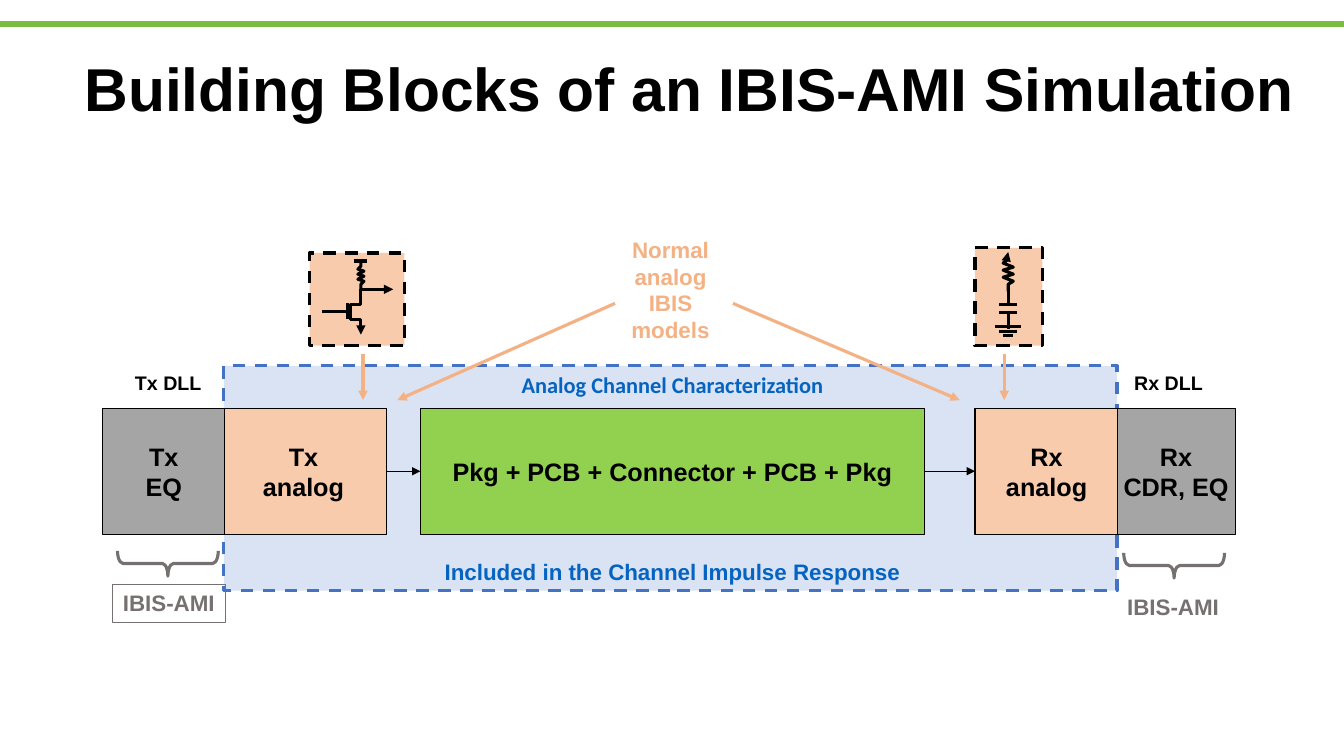
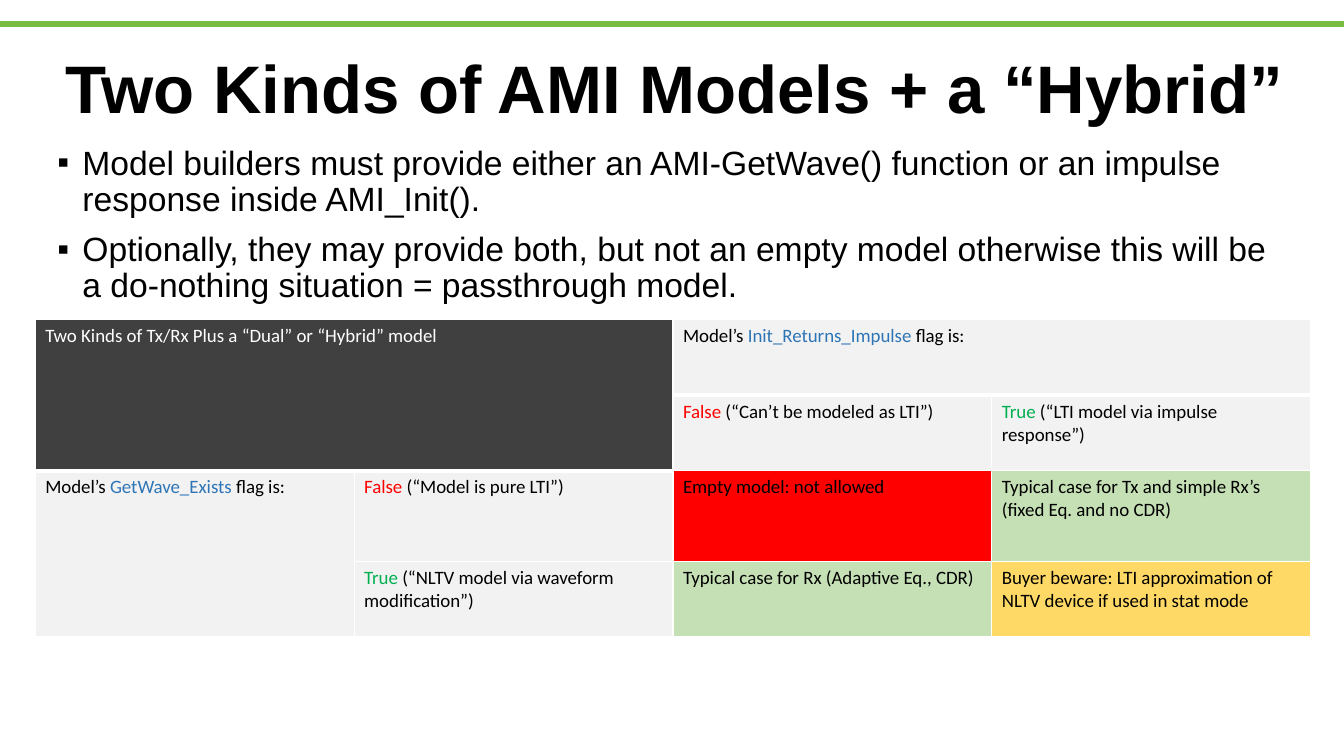
from lxml import etree
from pptx import Presentation
from pptx.dml.color import RGBColor
from pptx.enum.dml import MSO_LINE
from pptx.enum.shapes import MSO_CONNECTOR, MSO_SHAPE
from pptx.enum.text import MSO_ANCHOR, PP_ALIGN
from pptx.oxml.ns import qn
from pptx.util import Inches, Pt

STRAIGHT = MSO_CONNECTOR.STRAIGHT
RECTANGLE, BRACE = MSO_SHAPE.RECTANGLE, MSO_SHAPE.RIGHT_BRACE
DASH = MSO_LINE.DASH
LEFT, CENTER = PP_ALIGN.LEFT, PP_ALIGN.CENTER
TOP, MIDDLE = MSO_ANCHOR.TOP, MSO_ANCHOR.MIDDLE


class Theme:
    font, table_font = "Arial", "Calibri"
    black, white = RGBColor(0, 0, 0), RGBColor(255, 255, 255)
    band = RGBColor.from_string("7BBC42")
    channel_fill = RGBColor.from_string("DAE3F3")
    channel_line = RGBColor.from_string("4472C4")
    channel_text = RGBColor.from_string("0563C1")
    interconnect = RGBColor.from_string("92D050")
    analog = RGBColor.from_string("F8CBAD")
    analog_accent = RGBColor.from_string("F4B183")
    equalizer = RGBColor.from_string("A5A5A5")
    ami = RGBColor.from_string("767171")
    dark = RGBColor.from_string("404040")
    pale = RGBColor.from_string("F2F2F2")
    flag = RGBColor.from_string("2E75B6")
    red = RGBColor.from_string("FF0000")
    green = RGBColor.from_string("00B050")
    allowed = RGBColor.from_string("C5E0B4")
    caution = RGBColor.from_string("FFD966")
    block_size, label_size, dll_size = Pt(18), Pt(16), Pt(14)
    body_size, table_size = Pt(24), Pt(13.5)
    thin, thick, band_width = Pt(0.75), Pt(2.25), Pt(4.5)


def add_box(shapes, place, text="", size=Theme.label_size, color=Theme.black, fill=None,
            line=None, width=Theme.thin, dash=None, align=CENTER, wrap=False,
            font=Theme.font, anchor=None):
    """Add a filled rectangle, or a text box when there is no fill."""
    place = [Inches(length) for length in place]
    if fill is None:
        box = shapes.add_textbox(*place)
    else:
        box = shapes.add_shape(RECTANGLE, *place)
        box.shadow.inherit = False
        box.fill.solid()
        box.fill.fore_color.rgb = fill
    if line is not None:
        box.line.color.rgb = line
        box.line.width = width
        box.line.dash_style = dash
    frame = box.text_frame
    frame.word_wrap = wrap
    frame.vertical_anchor = anchor or (TOP if fill is None else MIDDLE)
    frame.text = text
    for para in frame.paragraphs:
        para.alignment = align
        para.font.name, para.font.size, para.font.bold = font, size, True
        para.font.color.rgb = color
    return box


def add_line(shapes, points, color=Theme.black, width=Theme.thick, arrow=None):
    """Draw a connector for two points, an open outline for more; arrow is headEnd or tailEnd."""
    points = [(Inches(x), Inches(y)) for x, y in points]
    if len(points) == 2:
        line = shapes.add_connector(STRAIGHT, *points[0], *points[1])
    else:
        builder = shapes.build_freeform(*points[0])
        builder.add_line_segments(points[1:], close=False)
        line = builder.convert_to_shape()
        line.fill.background()
        line.shadow.inherit = False
    line.line.color.rgb = color
    line.line.width = width
    properties = line._element.spPr
    if arrow:
        etree.SubElement(properties.find(qn("a:ln")), qn(f"a:{arrow}"), type="triangle")
    if len(points) == 2:
        etree.SubElement(properties, qn("a:effectLst"))
    return line


deck = Presentation()
deck.slide_width, deck.slide_height = Inches(13.33), Inches(7.5)

pages = []
for title, left, size in [
    ("Building Blocks of an IBIS-AMI Simulation", 0.74, Pt(43.2)),
    ("Two Kinds of AMI Models + a “Hybrid”", 0.55, Pt(48)),
]:
    page = deck.slides.add_slide(deck.slide_layouts[6])
    add_line(page.shapes, [(0, 0.24), (13.33, 0.24)], Theme.band, Theme.band_width)
    box = add_box(page.shapes, (left, 0.35, 12.32, 1.13), title, size,
                  align=LEFT, wrap=True, anchor=MIDDLE)
    box.text_frame.paragraphs[0].line_spacing = 0.9
    pages.append(page)
diagram_page, models_page = pages

# Signal chain
shapes = diagram_page.shapes
add_box(shapes, (2.22, 3.63, 8.86, 2.23), fill=Theme.channel_fill,
        line=Theme.channel_line, width=Theme.thick, dash=DASH)
blocks = {}
for text, left, width, fill in [
    ("Tx\nanalog", 2.19, 1.64, Theme.analog),
    ("Tx\nEQ", 1.02, 1.21, Theme.equalizer),
    ("Pkg + PCB + Connector + PCB + Pkg", 4.17, 5, Theme.interconnect),
    ("Rx\nanalog", 9.67, 1.42, Theme.analog),
    ("Rx\nCDR, EQ", 11.08, 1.17, Theme.equalizer),
]:
    blocks[text] = add_box(shapes, (left, 4.05, width, 1.25), text, Theme.block_size,
                           fill=fill, line=Theme.black)
chain = [blocks["Tx\nanalog"], blocks["Pkg + PCB + Connector + PCB + Pkg"], blocks["Rx\nanalog"]]
for source, target in zip(chain, chain[1:]):
    arrow = add_line(shapes, [(0, 0), (1, 1)], width=Theme.thin, arrow="tailEnd")
    arrow.begin_connect(source, 3)
    arrow.end_connect(target, 1)

# Labels
add_box(shapes, (4.85, 3.63, 3.64, 0.34), "Analog Channel Characterization",
        color=Theme.channel_text, font=Theme.table_font)
add_box(shapes, (4.28, 5.49, 4.78, 0.34), "Included in the Channel Impulse Response",
        color=Theme.channel_text)
add_box(shapes, (5.99, 2.29, 1.32, 1.18), "Normal analog\nIBIS\nmodels",
        color=Theme.analog_accent, wrap=True)
for text, left, width in [("Tx DLL", 1.24, 0.86), ("Rx DLL", 11.15, 0.89)]:
    add_box(shapes, (left, 3.63, width, 0.31), text, Theme.dll_size, align=LEFT)
for left, top, outline in [(1.11, 5.8, Theme.ami), (11.07, 5.84, None)]:
    add_box(shapes, (left, top, 1.13, 0.37), "IBIS-AMI", color=Theme.ami,
            line=outline, width=Pt(0.5))
for left, top in [(1.54, 5.09), (11.52, 5.11)]:
    brace = shapes.add_shape(BRACE, Inches(left), Inches(top), Inches(0.25), Inches(1))
    brace.rotation = 90
    brace.adjustments[0] = 0.22
    brace.shadow.inherit = False
    brace.fill.background()
    brace.line.color.rgb = Theme.ami
    brace.line.width = Theme.thick
for start, end in [((3.6, 3.51), (3.6, 3.97)), ((9.96, 3.51), (9.96, 3.97)),
                   ((6.1, 3.01), (3.94, 3.97)), ((7.27, 3.01), (9.52, 3.97))]:
    add_line(shapes, [start, end], Theme.analog_accent, arrow="tailEnd")

# Circuit symbols: frame, then strokes with their arrowheads
driver_strokes = [
    ([(3.58, 2.87), (3.58, 3.02), (3.48, 3.02), (3.48, 3.17), (3.58, 3.17), (3.58, 3.32)],
     "tailEnd"),
    ([(3.45, 3.01), (3.45, 3.16)], None),
    ([(3.45, 3.09), (3.19, 3.09)], None),
    ([(3.57, 2.87), (3.9, 2.87)], "tailEnd"),
    ([(3.58, 2.59), (3.58, 2.64), (3.55, 2.67), (3.61, 2.69), (3.55, 2.72), (3.61, 2.74),
      (3.55, 2.77), (3.61, 2.79), (3.58, 2.82), (3.58, 2.87)], None),
    ([(3.51, 2.59), (3.64, 2.59)], None),
]
receiver_strokes = [
    ([(10, 2.5), (10, 2.57), (9.95, 2.61), (10.05, 2.65), (9.95, 2.68), (10.05, 2.72),
      (9.95, 2.75), (10.05, 2.79), (10, 2.82), (10, 2.89)], "headEnd"),
    ([(10, 2.87), (10, 3.02)], None),
    ([(10, 3.1), (10, 3.26)], None),
]
for half_width, y in [(0.09, 3.02), (0.09, 3.1), (0.13, 3.24), (0.09, 3.29), (0.05, 3.33)]:
    receiver_strokes.append(([(10 - half_width, y), (10 + half_width, y)], None))
for place, strokes in [((3.07, 2.51, 0.94, 0.92), driver_strokes),
                       ((9.67, 2.46, 0.67, 0.97), receiver_strokes)]:
    symbol = shapes.add_group_shape().shapes
    add_box(symbol, place, fill=Theme.analog, line=Theme.black, width=Theme.thick, dash=DASH)
    for points, arrow in strokes:
        add_line(symbol, points, arrow=arrow)

# Model rules
body = models_page.shapes.add_textbox(Inches(0.47), Inches(1.4), Inches(12.36), Inches(1.7))
frame = body.text_frame
frame.word_wrap = True
frame.text = (
    "Model builders must provide either an AMI-GetWave() function or an impulse response "
    "inside AMI_Init().\n"
    "Optionally, they may provide both, but not an empty model otherwise this will be "
    "a do-nothing situation = passthrough model."
)
for index, para in enumerate(frame.paragraphs):
    properties = para._p.get_or_add_pPr()
    properties.set("marL", str(Inches(0.25)))
    properties.set("indent", str(-Inches(0.25)))
    etree.SubElement(properties, qn("a:buFont"), typeface=Theme.font)
    etree.SubElement(properties, qn("a:buChar"), char="▪")
    para.line_spacing = 0.9
    if index:
        para.space_before = Pt(10)
    para.font.name, para.font.size = Theme.font, Theme.body_size
    para.font.color.rgb = Theme.black

# Flag table: (row, column), fill, runs
black = Theme.black
cells = [
    ((0, 0), Theme.dark, [("Two Kinds of Tx/Rx Plus a “Dual” or “Hybrid” model", Theme.white)]),
    ((0, 2), Theme.pale, [("Model’s ", black), ("Init_Returns_Impulse ", Theme.flag),
                          ("flag is:", black)]),
    ((1, 2), Theme.pale, [("False", Theme.red), (" (“Can’t be modeled as LTI”)", black)]),
    ((1, 3), Theme.pale, [("True", Theme.green), (" (“LTI model via impulse response”)", black)]),
    ((2, 0), Theme.pale, [("Model’s ", black), ("GetWave_Exists ", Theme.flag),
                          ("flag is:", black)]),
    ((2, 1), Theme.pale, [("False", Theme.red), (" (“Model is pure LTI”)", black)]),
    ((2, 2), Theme.red, [("Empty model: not allowed", black)]),
    ((2, 3), Theme.allowed, [("Typical case for Tx and simple Rx’s (fixed Eq. and no CDR)", black)]),
    ((3, 1), Theme.pale, [("True", Theme.green),
                          (" (“NLTV model via waveform modification”)", black)]),
    ((3, 2), Theme.allowed, [("Typical case for Rx (Adaptive Eq., CDR)", black)]),
    ((3, 3), Theme.caution, [("Buyer beware: LTI approximation of NLTV device if used in stat mode",
                              black)]),
]
row_heights = [0.75, 0.75, 0.9, 0.75]
table = models_page.shapes.add_table(4, 4, Inches(0.35), Inches(3.17), Inches(12.65),
                                     Inches(sum(row_heights))).table
table.first_row = table.horz_banding = False
for row, height in zip(table.rows, row_heights):
    row.height = Inches(height)
for first, last in [((0, 0), (1, 1)), ((0, 2), (0, 3)), ((2, 0), (3, 0))]:
    table.cell(*first).merge(table.cell(*last))
for (row, column), fill, runs in cells:
    cell = table.cell(row, column)
    para = cell.text_frame.paragraphs[0]
    para.font.name, para.font.size = Theme.table_font, Theme.table_size
    for text, color in runs:
        span = para.add_run()
        span.text = text
        span.font.color.rgb = color
    properties = cell._tc.get_or_add_tcPr()
    for edge in ("lnL", "lnR", "lnT", "lnB"):
        heavy = (row, edge) in [(0, "lnB"), (1, "lnT")]
        border = etree.SubElement(properties, qn(f"a:{edge}"), w=str(Pt(3 if heavy else 1)))
        solid = etree.SubElement(border, qn("a:solidFill"))
        etree.SubElement(solid, qn("a:srgbClr"), val=str(Theme.white))
    cell.fill.solid()
    cell.fill.fore_color.rgb = fill

deck.save("out.pptx")
